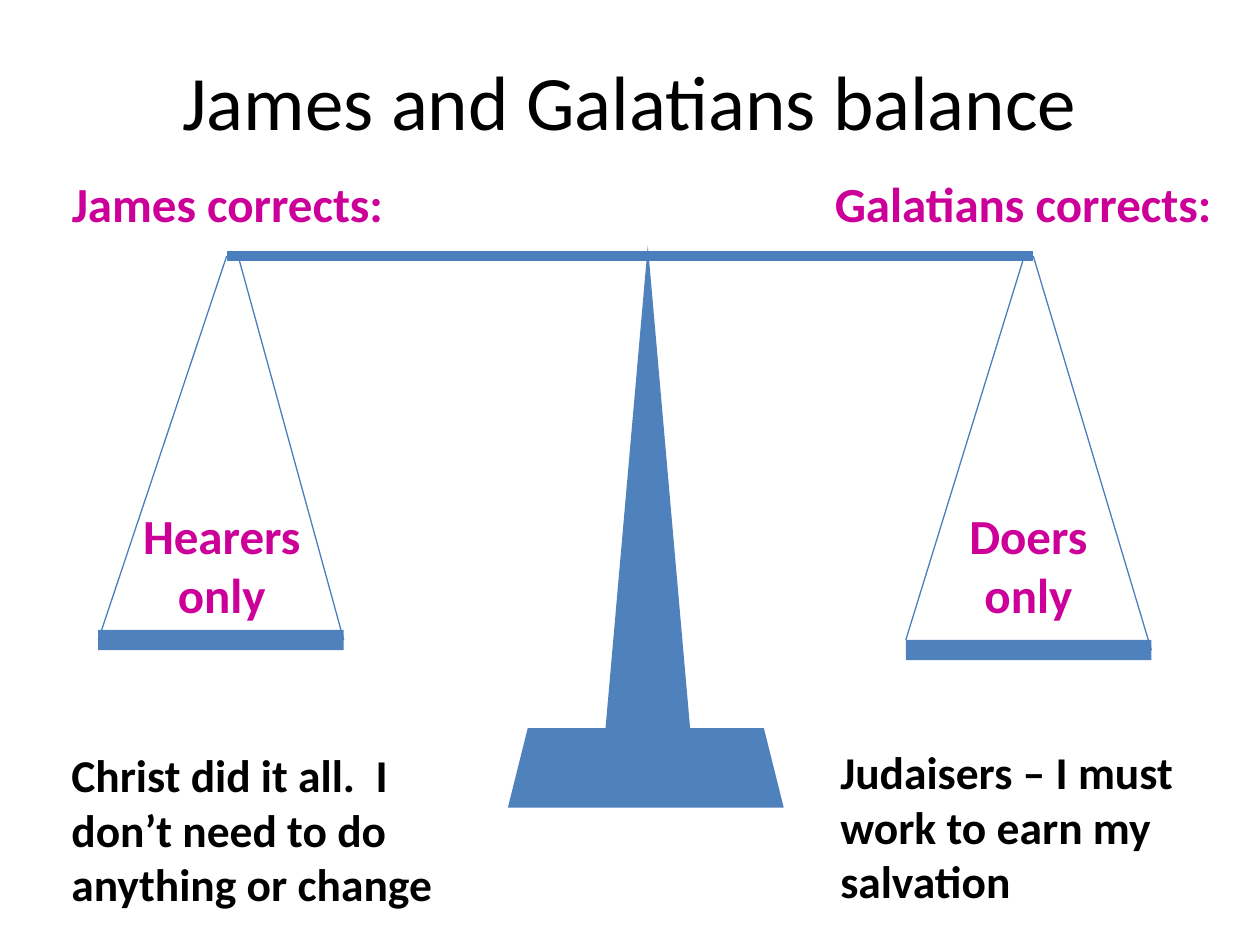
from pptx import Presentation
from pptx.dml.color import RGBColor
from pptx.enum.shapes import MSO_CONNECTOR, MSO_SHAPE
from pptx.enum.text import MSO_ANCHOR, PP_ALIGN
from pptx.oxml.ns import qn
from pptx.util import Cm, Pt

STRAIGHT = MSO_CONNECTOR.STRAIGHT
RECT, TRIANGLE, TRAPEZOID = MSO_SHAPE.RECTANGLE, MSO_SHAPE.ISOSCELES_TRIANGLE, MSO_SHAPE.TRAPEZOID
LEFT, CENTER = PP_ALIGN.LEFT, PP_ALIGN.CENTER
MIDDLE, TOP = MSO_ANCHOR.MIDDLE, MSO_ANCHOR.TOP
LEFT_SIDE, RIGHT_SIDE = 1, 3

THEME = {
    "font": "Calibri",
    "black": RGBColor(0x00, 0x00, 0x00),
    "accent": RGBColor(0xCC, 0x00, 0x99),
    "fill": RGBColor(0x4F, 0x81, 0xBD),
    "line": RGBColor(0x4B, 0x7E, 0xBC),
    "title": Pt(44),
    "label": Pt(28),
    "body": Pt(26),
    "beam": Pt(6),
    "cord": Pt(0.75),
}

# Boxes are left, top, width, height in centimetres.
TITLE = ("James and Galatians balance", (1.27, 0.41, 22.86, 3.18))
LABELS = [
    ("James corrects:", (0.99, 3.38, 7.19, 1.45)),
    ("Galatians corrects:", (16.46, 3.38, 8.33, 1.45)),
    ("Hearers only", (2.59, 10.06, 3.76, 2.64)),
    ("Doers only", (18.85, 10.06, 3.76, 2.64)),
]
NOTES = [
    ("Christ did it all.  I don’t need to do anything or change", (1.19, 14.94, 8.94, 3.58)),
    ("Judaisers – I must work to earn my salvation", (16.69, 14.88, 9.09, 3.58)),
]
PILLAR = (12.07, 4.95, 1.98, 11.3)
BASE = (10.24, 14.68, 5.56, 1.6)
BEAM_Y, BEAM_LEFT, BEAM_RIGHT = 5.16, 4.57, 20.83
PAN_W, PAN_H = 4.95, 0.41
LEFT_PAN = (1.98, 12.7, PAN_W, PAN_H)
RIGHT_PAN = (18.26, 12.9, PAN_W, PAN_H)
INNER_LEFT, INNER_RIGHT = 4.8, 20.65


def cm(values):
    return [Cm(v) for v in values]


def write(sp, text, size, color, bold, align, anchor):
    tf = sp.text_frame
    tf.word_wrap = True
    tf.vertical_anchor = anchor
    tf.text = text
    p = tf.paragraphs[0]
    p.alignment = align
    font = p.runs[0].font
    font.name, font.size, font.bold = THEME["font"], THEME[size], bold
    font.color.rgb = THEME[color]


def add_text(s, text, box, size, color, align):
    write(s.shapes.add_textbox(*cm(box)), text, size, color, True, align, TOP)


def add_solid(s, kind, box):
    sp = s.shapes.add_shape(kind, *cm(box))
    sp.shadow.inherit = False
    sp.fill.solid()
    sp.fill.fore_color.rgb = THEME["fill"]
    sp.line.fill.background()
    return sp


def add_line(s, start, end, width):
    line = s.shapes.add_connector(STRAIGHT, *cm(start + end))
    line.line.color.rgb = THEME["line"]
    line.line.width = THEME[width]
    sp_pr = line._element.spPr
    sp_pr.append(sp_pr.makeelement(qn("a:effectLst"), {}))
    return line


def add_cord(s, x, pan, side):
    """Hang a pan from the beam by the middle of one of its sides."""
    cord = add_line(s, (x, BEAM_Y), (x, BEAM_Y), "cord")
    cord.end_connect(pan, side)


def main():
    prs = Presentation()
    prs.slide_width, prs.slide_height = Cm(25.4), Cm(19.05)
    s = prs.slides.add_slide(prs.slide_layouts[5])

    text, box = TITLE
    title = s.shapes.title
    title.left, title.top, title.width, title.height = cm(box)
    write(title, text, "title", "black", False, CENTER, MIDDLE)

    for text, box in LABELS:
        add_text(s, text, box, "label", "accent", CENTER)

    add_solid(s, TRIANGLE, PILLAR)
    add_line(s, (BEAM_LEFT, BEAM_Y), (BEAM_RIGHT, BEAM_Y), "beam")
    left_pan = add_solid(s, RECT, LEFT_PAN)
    right_pan = add_solid(s, RECT, RIGHT_PAN)
    add_cord(s, BEAM_LEFT, left_pan, LEFT_SIDE)
    add_cord(s, INNER_LEFT, left_pan, RIGHT_SIDE)
    add_cord(s, BEAM_RIGHT, right_pan, RIGHT_SIDE)
    add_line(s, (INNER_RIGHT, BEAM_Y), RIGHT_PAN[:2], "cord")

    for text, box in NOTES:
        add_text(s, text, box, "body", "black", LEFT)
    add_solid(s, TRAPEZOID, BASE)

    prs.save("out.pptx")


if __name__ == "__main__":
    main()
